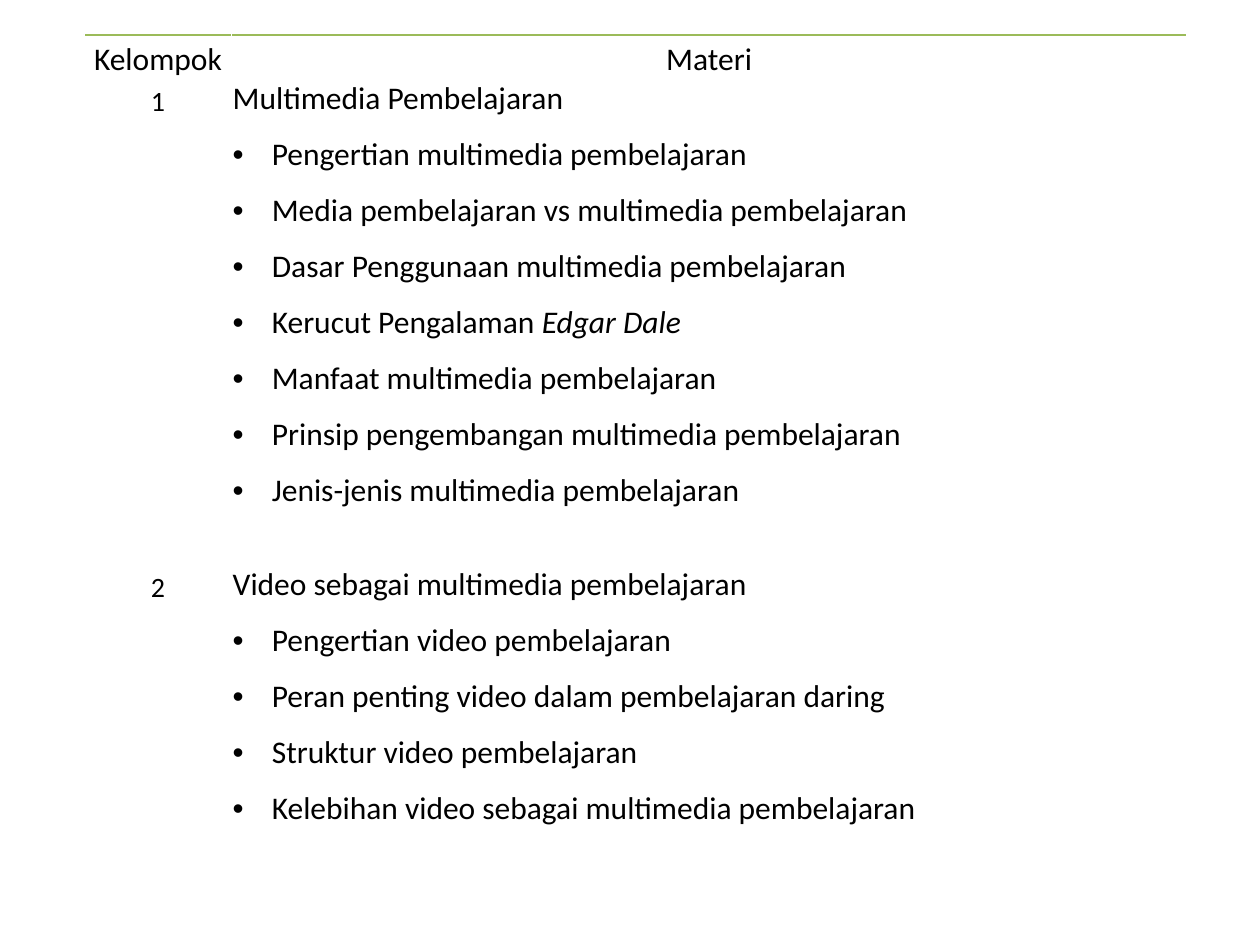
from dataclasses import dataclass

import pptx
import pptx.dml.color
import pptx.enum.text
import pptx.oxml
import pptx.oxml.ns
import pptx.util
from pptx.util import Cm, Pt


@dataclass(frozen=True)
class Theme:
    font: str = "Calibri"
    text: str = "000000"
    rule: str = "9BBB59"
    body: int = 18
    number: int = 16
    gap: int = 10
    rule_width: int = 1


THEME = Theme()
COLUMNS = (2.97, 19.25)  # cm
ROWS = (0.89, 9.8, 6.45, 1.58)  # cm
HEADINGS = ("Kelompok", "Materi")

# Each topic is a list of runs; a run is a text and its italic flag
GROUPS = [
    ("Multimedia Pembelajaran", [
        [("Pengertian multimedia pembelajaran", False)],
        [("Media pembelajaran vs multimedia pembelajaran", False)],
        [("Dasar Penggunaan multimedia pembelajaran", False)],
        [("Kerucut Pengalaman ", False), ("Edgar Dale", True)],
        [("Manfaat multimedia pembelajaran", False)],
        [("Prinsip pengembangan multimedia pembelajaran", False)],
        [("Jenis-jenis multimedia pembelajaran", False)],
    ]),
    ("Video sebagai multimedia pembelajaran", [
        [("Pengertian video pembelajaran", False)],
        [("Peran penting video dalam pembelajaran daring", False)],
        [("Struktur video pembelajaran", False)],
        [("Kelebihan video sebagai multimedia pembelajaran", False)],
    ]),
]


def add_runs(p, runs, size):
    p.space_after = Pt(THEME.gap)
    for text, italic in runs:
        r = p.add_run()
        r.text = text
        r.font.name = THEME.font
        r.font.size = Pt(size)
        r.font.italic = italic
        r.font.color.rgb = pptx.dml.color.RGBColor.from_string(THEME.text)


def add_centred(cell, text, size):
    p = cell.text_frame.paragraphs[0]
    p.alignment = pptx.enum.text.PP_ALIGN.CENTER
    p.line_spacing = 1.15
    add_runs(p, [(text, False)], size)


def add_bullet(p):
    pPr = p._p.get_or_add_pPr()
    pPr.set("marL", str(Cm(0.79)))
    pPr.set("indent", str(-Cm(0.79)))
    ns = pptx.oxml.ns.nsdecls("a")
    pPr.append(pptx.oxml.parse_xml(f'<a:buFont {ns} typeface="Arial"/>'))
    pPr.append(pptx.oxml.parse_xml(f'<a:buChar {ns} char="•"/>'))


def add_topics(cell, title, topics):
    tf = cell.text_frame
    add_runs(tf.paragraphs[0], [(title, False)], THEME.body)
    for runs in topics:
        p = tf.add_paragraph()
        add_runs(p, runs, THEME.body)
        add_bullet(p)


def add_rule(cell, side):
    ns = pptx.oxml.ns.nsdecls("a")
    line = pptx.oxml.parse_xml(
        f'<a:{side} {ns} w="{Pt(THEME.rule_width)}"><a:solidFill>'
        f'<a:srgbClr val="{THEME.rule}"/></a:solidFill></a:{side}>')
    cell._tc.get_or_add_tcPr().insert(0, line)


def add_group_table(s, left, top, width, height):
    table = s.shapes.add_table(len(ROWS), len(COLUMNS),
                               left, top, width, height).table
    table.first_row = table.horz_banding = False
    for column, share in zip(table.columns, COLUMNS):
        column.width = round(width * share / sum(COLUMNS))
    for row, share in zip(table.rows, ROWS):
        row.height = round(height * share / sum(ROWS))
    for cell in table.iter_cells():
        cell.fill.background()
        cell.margin_left = cell.margin_right = Cm(0.02)
        cell.margin_top = cell.margin_bottom = 0

    # Headings, with the rules above and below the table
    for i, heading in enumerate(HEADINGS):
        add_centred(table.cell(0, i), heading, THEME.body)
        add_rule(table.cell(0, i), "lnT")
        add_rule(table.cell(len(ROWS) - 1, i), "lnB")

    # One row for each group
    for i, (title, topics) in enumerate(GROUPS, start=1):
        add_centred(table.cell(i, 0), str(i), THEME.number)
        add_topics(table.cell(i, 1), title, topics)


def main():
    prs = pptx.Presentation()
    prs.slide_width, prs.slide_height = Cm(25.4), Cm(19.05)
    s = prs.slides.add_slide(prs.slide_layouts[6])
    add_group_table(s, Cm(1.7), Cm(0.71), Cm(sum(COLUMNS)), Cm(sum(ROWS)))
    prs.save("out.pptx")


if __name__ == "__main__":
    main()
